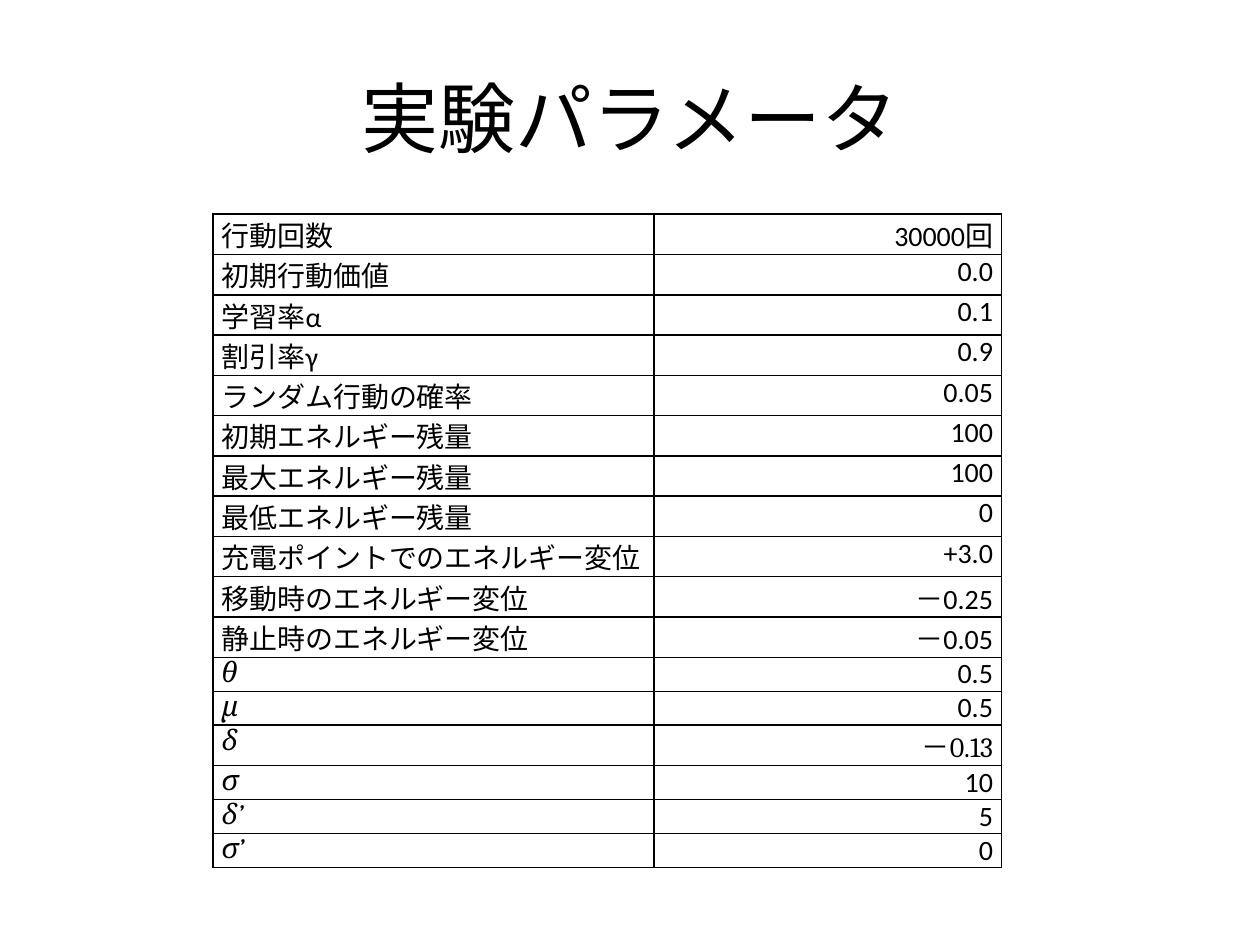
from dataclasses import dataclass

from pptx import Presentation
from pptx.dml.color import RGBColor
from pptx.enum.lang import MSO_LANGUAGE_ID
from pptx.enum.text import MSO_ANCHOR, PP_ALIGN
from pptx.oxml import parse_xml
from pptx.oxml.ns import nsdecls
from pptx.util import Inches, Pt

COLORS = {"ink": "000000"}
SANS, SERIF = "Calibri", "Cambria"
TALL, LOW = 0.32, 0.27


@dataclass
class Param:
    name: str
    value: str
    height: float = TALL
    symbol: bool = False
    font: str = SANS  # font of the value


PARAMS = [
    Param("行動回数", "30000回"),
    Param("初期行動価値", "0.0"),
    Param("学習率α", "0.1"),
    Param("割引率γ", "0.9"),
    Param("ランダム行動の確率", "0.05"),
    Param("初期エネルギー残量", "100"),
    Param("最大エネルギー残量", "100"),
    Param("最低エネルギー残量", "0"),
    Param("充電ポイントでのエネルギー変位", "+3.0"),
    Param("移動時のエネルギー変位", "－0.25"),
    Param("静止時のエネルギー変位", "－0.05"),
    Param("θ", "0.5", LOW, True),
    Param("μ", "0.5", LOW, True),
    Param("δ", "－0.13", TALL, True, SERIF),
    Param("σ", "10", LOW, True),
    Param("δ’", "5", LOW, True),
    Param("σ’", "0", LOW, True),
]


def write(frame, text: str, size: float, align, font: str = SANS,
          italic: bool = False) -> None:
    para = frame.paragraphs[0]
    para.alignment = align
    run = para.add_run()
    run.text = text
    run.font.name = font
    run.font.size = Pt(size)
    run.font.italic = italic
    run.font.language_id = MSO_LANGUAGE_ID.JAPANESE
    run.font.color.rgb = RGBColor.from_string(COLORS["ink"])


def style(cell) -> None:
    """Set margins, a clear fill and thin borders."""
    cell.margin_left = cell.margin_right = Inches(0.07)
    cell.margin_top = cell.margin_bottom = 0
    props = cell._tc.get_or_add_tcPr()
    for side in ("lnL", "lnR", "lnT", "lnB"):
        props.append(parse_xml(
            f'<a:{side} {nsdecls("a")} w="{Pt(1)}"><a:solidFill>'
            f'<a:srgbClr val="{COLORS["ink"]}"/></a:solidFill></a:{side}>'))
    cell.fill.background()


def add_title(slide, text: str) -> None:
    box = slide.shapes.add_textbox(Inches(0.5), Inches(0.3), Inches(9), Inches(1.25))
    frame = box.text_frame
    frame.word_wrap = True
    frame.vertical_anchor = MSO_ANCHOR.MIDDLE
    write(frame, text, 44, PP_ALIGN.CENTER)


def add_params(slide, params: list[Param]) -> None:
    widths = (3.5, 2.76)
    total = sum(p.height for p in params)
    table = slide.shapes.add_table(
        len(params), len(widths), Inches(1.69), Inches(1.7),
        Inches(sum(widths)), Inches(total)).table
    table.first_row = table.horz_banding = False
    for col, width in zip(table.columns, widths):
        col.width = Inches(width)
    for row, param in zip(table.rows, params):
        row.height = Inches(param.height)
        name, value = row.cells
        style(name)
        style(value)
        write(name.text_frame, param.name, 16, PP_ALIGN.LEFT,
              SERIF if param.symbol else SANS, param.symbol)
        write(value.text_frame, param.value, 16, PP_ALIGN.RIGHT, param.font)


def main() -> None:
    deck = Presentation()
    deck.slide_width, deck.slide_height = Inches(10), Inches(7.5)
    slide = deck.slides.add_slide(deck.slide_layouts[6])
    # Heading
    add_title(slide, "実験パラメータ")
    # Parameter table
    add_params(slide, PARAMS)
    deck.save("out.pptx")


if __name__ == "__main__":
    main()
